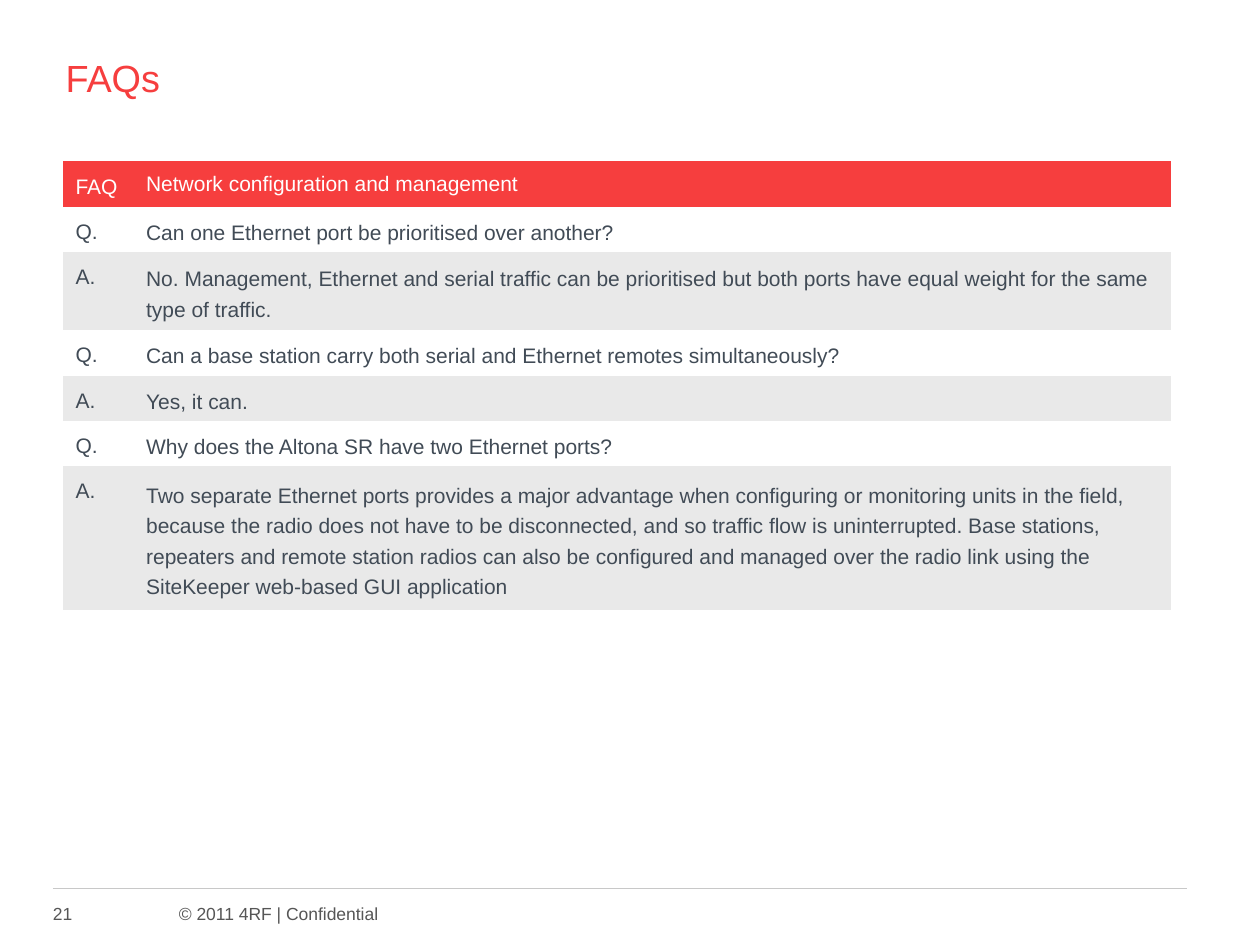
from dataclasses import dataclass

from lxml import etree
from pptx import Presentation
from pptx import util as u
from pptx.dml.color import RGBColor
from pptx.enum import shapes, text
from pptx.oxml.ns import qn


@dataclass(frozen=True)
class Theme:
    font: str = "Arial"
    red: str = "F63E3E"
    ink: str = "414B56"
    white: str = "FFFFFF"
    band: str = "E9E9E9"
    rule: str = "C8C8C8"
    grey: str = "565656"
    head: float = 21.6
    body: float = 12
    foot: float = 10


HEAD = ("FAQ", "Network configuration and management")
PAIRS = [
    ("Can one Ethernet port be prioritised over another?",
     "No. Management, Ethernet and serial traffic can be prioritised but both "
     "ports have equal weight for the same type of traffic."),
    ("Can a base station carry both serial and Ethernet remotes simultaneously?",
     "Yes, it can."),
    ("Why does the Altona SR have two Ethernet ports?",
     "Two separate Ethernet ports provides a major advantage when configuring "
     "or monitoring units in the field, because the radio does not have to be "
     "disconnected, and so traffic flow is uninterrupted. Base stations, "
     "repeaters and remote station radios can also be configured and managed "
     "over the radio link using the SiteKeeper web-based GUI application"),
]


class Deck:
    def __init__(self, theme):
        self.theme = theme
        self.prs = Presentation()
        self.prs.slide_width, self.prs.slide_height = u.Inches(10), u.Inches(7.5)
        self.slide = self.prs.slides.add_slide(self.prs.slide_layouts[5])

    def add_run(self, para, words, size, color):
        run = para.add_run()
        run.text = words
        run.font.name = self.theme.font
        run.font.size = u.Pt(size)
        run.font.color.rgb = RGBColor.from_string(color)

    def title(self, words, *box):
        shape = self.slide.shapes.title
        shape.left, shape.top, shape.width, shape.height = map(u.Inches, box)
        frame = shape.text_frame
        frame.auto_size = text.MSO_AUTO_SIZE.NONE
        frame.vertical_anchor = text.MSO_ANCHOR.MIDDLE
        para = frame.paragraphs[0]
        para.alignment = text.PP_ALIGN.LEFT
        self.add_run(para, words, self.theme.head, self.theme.red)

    def rule(self, left, right, top):
        line = self.slide.shapes.add_connector(
            shapes.MSO_CONNECTOR.STRAIGHT,
            *map(u.Inches, (left, top, right, top)))
        line.line.color.rgb = RGBColor.from_string(self.theme.rule)
        line.line.width = u.Pt(0.75)
        etree.SubElement(line.element.spPr, qn("a:effectLst"))

    def footer(self, words, stop, *box):
        """Add a line of text with one left tab stop, in inches."""
        frame = self.slide.shapes.add_textbox(*map(u.Inches, box)).text_frame
        frame.word_wrap = True
        frame.margin_left = frame.margin_right = 0
        frame.margin_top = frame.margin_bottom = 0
        para = frame.paragraphs[0]
        tabs = etree.SubElement(para._p.get_or_add_pPr(), qn("a:tabLst"))
        etree.SubElement(tabs, qn("a:tab"), pos=str(u.Inches(stop)), algn="l")
        self.add_run(para, words, self.theme.foot, self.theme.grey)

    def cell(self, cell, words, color, fill, lead, anchor):
        if fill:
            cell.fill.solid()
            cell.fill.fore_color.rgb = RGBColor.from_string(fill)
        else:
            cell.fill.background()
        cell.vertical_anchor = anchor
        para = cell.text_frame.paragraphs[0]
        para.line_spacing = lead
        self.add_run(para, words, self.theme.body, color)

    def table(self, rows, left, top, cols, high):
        """Add a table with a red first row and every second row below shaded."""
        grid = self.slide.shapes.add_table(
            len(rows), len(cols), u.Inches(left), u.Inches(top),
            u.Inches(sum(cols)), u.Inches(high * len(rows))).table
        grid.first_row = grid.horz_banding = False
        for col, wide in zip(grid.columns, cols):
            col.width = u.Inches(wide)
        look = self.theme
        mid, up = text.MSO_ANCHOR.MIDDLE, text.MSO_ANCHOR.TOP
        for i, row in enumerate(rows):
            color = look.ink if i else look.white
            fill = (None if i % 2 else look.band) if i else look.red
            for j, words in enumerate(row):
                lead = 1.0 if i == 0 and j else 1.3
                anchor = up if i and j == 0 else mid
                self.cell(grid.cell(i, j), words, color, fill, lead, anchor)
        # The default table style draws white borders and a tint; use the plain one.
        style = grid._tbl.tblPr.find(qn("a:tableStyleId"))
        style.text = "{2D5ABB26-0587-4C30-8999-92F81FD0307C}"


def main():
    deck = Deck(Theme())
    deck.rule(0.42, 9.42, 7.05)
    deck.footer("21\t© 2011 4RF | Confidential", 1, 0.42, 7.17, 4.86, 0.18)
    deck.title("FAQs", 0.42, 0.39, 9, 0.44)
    rows = [HEAD]
    for ask, reply in PAIRS:
        rows += [("Q.", ask), ("A.", reply)]
    deck.table(rows, 0.5, 1.28, (0.56, 8.23), 0.28)
    deck.prs.save("out.pptx")


if __name__ == "__main__":
    main()
